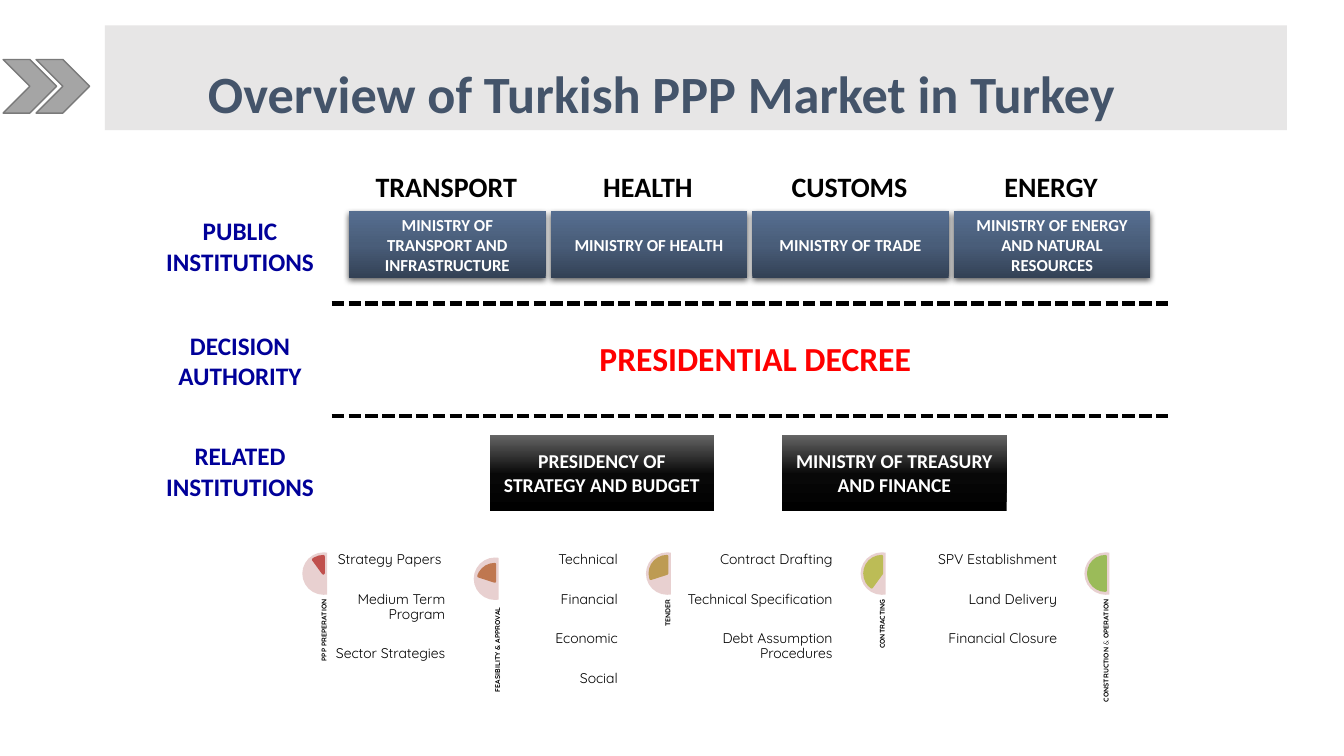
from copy import deepcopy
from dataclasses import dataclass

from lxml import etree
from pptx import Presentation
from pptx.dml.color import RGBColor
from pptx.enum.dml import MSO_LINE
from pptx.enum.shapes import MSO_CONNECTOR, MSO_SHAPE
from pptx.enum.text import MSO_ANCHOR, MSO_AUTO_SIZE, PP_ALIGN
from pptx.oxml.ns import qn
from pptx.util import Cm, Pt

CENTER, RIGHT, LEFT = PP_ALIGN.CENTER, PP_ALIGN.RIGHT, PP_ALIGN.LEFT
TOP, MIDDLE, BOTTOM = MSO_ANCHOR.TOP, MSO_ANCHOR.MIDDLE, MSO_ANCHOR.BOTTOM
NO_FIT = MSO_AUTO_SIZE.NONE

COLORS = {
    "black": "000000", "white": "FFFFFF", "title": "44546A", "banner": "E7E6E6",
    "chevron": "A5A5A5", "chevron edge": "7A7A7A", "row": "000099",
    "decree": "FF0000", "dial": "E8D0D0",
}
BLUE_SHADES = ((0, "334155"), (0.5, "495D79"), (1, "566E90"))
BLACK_SHADES = ((0, "000000"), (0.48, "080808"), (1, "666666"))

NO_MARGINS = {"margin_left": 0, "margin_right": 0, "margin_top": 0, "margin_bottom": 0}
STAGE_PARA = {"alignment": RIGHT, "line_spacing": 0.9, "space_before": Pt(0)}
CENTERED = {"alignment": CENTER}


@dataclass
class Area:
    left: float
    top: float
    width: float
    height: float

    def lengths(self) -> tuple:
        return Cm(self.left), Cm(self.top), Cm(self.width), Cm(self.height)


@dataclass
class Type:
    size: float
    color: str
    bold: bool = True
    name: str = "Calibri"


@dataclass
class Sector:
    heading: str
    ministry: tuple


@dataclass
class Stage:
    left: float
    color: str
    label: tuple
    items: tuple = ()
    top: float = 13.92
    pie_gap: float = 0.1
    label_top: float = 15.1
    label_middle: float = 0.33


HEADING = Type(20, "black")
ROW = Type(18, "row")
DECREE = Type(24, "decree")
MINISTRY = Type(12, "white")
RELATED = Type(14, "white")
TITLE = Type(37.4, "title")
STAGE_LABEL = Type(5, "black", name="Quicksand")
STAGE_ITEM = Type(10, "black", False, "Quicksand")

SECTORS = (
    Sector("TRANSPORT", ("MINISTRY OF TRANSPORT AND INFRASTRUCTURE",)),
    Sector("HEALTH", ("MINISTRY OF HEALTH",)),
    Sector("CUSTOMS", ("MINISTRY OF TRADE",)),
    Sector("ENERGY", ("MINISTRY OF ENERGY", "AND NATURAL RESOURCES")),
)
ROWS = (
    (5.38, ("PUBLIC INSTITUTIONS",)),
    (8.26, ("DECISION", "AUTHORITY")),
    (11.05, ("RELATED", "INSTITUTIONS")),
)
RELATED_BOXES = (
    (12.34, "PRESIDENCY OF STRATEGY AND BUDGET"),
    (19.71, "MINISTRY OF TREASURY AND FINANCE"),
)
STAGES = (
    Stage(7.62, "C0504D", ("PPP PREPERATION",),
          ("Strategy Papers ", "Medium Term Program", "Sector Strategies")),
    Stage(11.94, "BF7750", ("FEASIBILITY & APPROVAL",),
          ("Technical", "Financial", "Economic", "Social"), 14.05, 0.17, 15.3, 0.38),
    Stage(16.28, "BD9B53", ("TENDER",),
          ("Contract Drafting", "Technical Specification", "Debt Assumption Procedures")),
    Stage(21.69, "BCBC56", ("CONTRACTING",),
          ("SPV Establishment", "Land Delivery", "Financial Closure")),
    Stage(27.33, "9BBB59", ("CONSTRUCTION", " & ", "OPERATION")),
)
LIST_WIDTHS = (2.84, 2.87, 3.94, 4.19)


def rgb(color: str) -> RGBColor:
    return RGBColor.from_string(COLORS.get(color, color))


def apply(target, values: dict) -> None:
    for name, value in values.items():
        setattr(target, name, value)


def place(shape, area: Area) -> None:
    apply(shape, dict(zip(("left", "top", "width", "height"), area.lengths())))


def add_span(para, text: str, kind: Type, bold: bool) -> None:
    span = para.add_run()
    span.text = text
    apply(span.font, {"size": Pt(kind.size), "bold": bold, "name": kind.name})
    span.font.color.rgb = rgb(kind.color)


def write(shape, lines: tuple, kind: Type, para_format: dict, frame_format: dict) -> None:
    """Each line is a tuple of spans; every second span is not bold."""
    frame = shape.text_frame
    apply(frame, {"word_wrap": True, "auto_size": NO_FIT, **frame_format})
    for index, spans in enumerate(lines):
        para = frame.add_paragraph() if index else frame.paragraphs[0]
        apply(para, para_format)
        for number, text in enumerate(spans):
            add_span(para, text, kind, kind.bold and number % 2 == 0)


def add_text(page, area: Area, lines: tuple, kind: Type) -> None:
    box = page.shapes.add_textbox(*area.lengths())
    write(box, [(line,) for line in lines], kind, CENTERED, {"vertical_anchor": MIDDLE})


def add_figure(page, form, area: Area, fill: str = "", edge: str = "", weight: float = 1):
    figure = page.shapes.add_shape(form, *area.lengths())
    figure.shadow.inherit = False
    if fill:
        figure.fill.solid()
        figure.fill.fore_color.rgb = rgb(fill)
    if edge:
        figure.line.color.rgb = rgb(edge)
        figure.line.width = Pt(weight)
    else:
        figure.line.fill.background()
    return figure


def add_shaded_box(page, area: Area, lines: tuple, kind: Type, shades: tuple):
    box = add_figure(page, MSO_SHAPE.RECTANGLE, area)
    box.fill.gradient()
    box.fill.gradient_angle = 90
    stop_list = next(box._element.spPr.iter(qn("a:gsLst")))
    stop_list.append(deepcopy(stop_list[-1]))
    for stop, (position, color) in zip(box.fill.gradient_stops, shades):
        stop.position = position
        stop.color.rgb = rgb(color)
    write(box, [(line,) for line in lines], kind, CENTERED, {"vertical_anchor": MIDDLE})
    return box


def add_drop_shadow(box) -> None:
    effects = box._element.spPr.find(qn("a:effectLst"))
    shadow = etree.SubElement(effects, qn("a:outerShdw"), blurRad=str(Pt(4.5)),
                              dist=str(Pt(1.5)), dir="5400000", rotWithShape="0")
    color = etree.SubElement(shadow, qn("a:srgbClr"), val=COLORS["black"])
    etree.SubElement(color, qn("a:alpha"), val="63000")


def add_divider(page, top: float) -> None:
    line = page.shapes.add_connector(MSO_CONNECTOR.STRAIGHT, Cm(8.36), Cm(top), Cm(29.44), Cm(top))
    line.line.color.rgb = rgb("black")
    apply(line.line, {"width": Pt(3), "dash_style": MSO_LINE.SQUARE_DOT})
    etree.SubElement(line._element.spPr, qn("a:effectLst"))


def add_stage(page, stage: Stage, number: int) -> None:
    dial = add_figure(page, MSO_SHAPE.CHORD, Area(stage.left, stage.top, 1.07, 1.07), "dial")
    dial.adjustments[0], dial.adjustments[1] = 48, 168
    pie = add_figure(page, MSO_SHAPE.PIE,
                     Area(stage.left + 0.1, stage.top + stage.pie_gap, 0.86, 0.86),
                     stage.color, stage.color, 2)
    pie.adjustments[0], pie.adjustments[1] = 162 - 21.6 * number, 162
    length, depth = 3.1, 0.64
    middle = stage.left + stage.label_middle
    area = Area(middle - length / 2, stage.label_top + (length - depth) / 2, length, depth)
    label = page.shapes.add_textbox(*area.lengths())
    label.rotation = 270
    write(label, (stage.label,), STAGE_LABEL, STAGE_PARA,
          {**NO_MARGINS, "vertical_anchor": BOTTOM})


def fill_list(holder, stage: Stage, width: float) -> None:
    place(holder, Area(stage.left + 0.76, 13.92, width, 4.27))
    write(holder, [(item,) for item in stage.items], STAGE_ITEM,
          {**STAGE_PARA, "space_after": Pt(17.5)}, {**NO_MARGINS, "vertical_anchor": TOP})
    for para in holder.text_frame.paragraphs:
        properties = para._p.get_or_add_pPr()
        properties.set("marL", "0")
        properties.set("indent", "0")
        etree.SubElement(properties, qn("a:buNone"))


def main() -> None:
    deck = Presentation()
    deck.slide_width, deck.slide_height = Cm(33.87), Cm(19.05)
    page = deck.slides.add_slide(deck.slide_layouts.get_by_name("Comparison"))

    # Title banner and chevrons
    title = page.shapes.title
    place(title, Area(2.64, 0.64, 29.79, 2.64))
    title.fill.solid()
    title.fill.fore_color.rgb = rgb("banner")
    write(title, (("Overview of Turkish PPP Market in Turkey",),), TITLE,
          {"alignment": LEFT, "line_spacing": 0.7},
          {"vertical_anchor": BOTTOM, "margin_left": Cm(2.6), "margin_bottom": Cm(0.19)})
    for left in (0.08, 0.91):
        add_figure(page, MSO_SHAPE.CHEVRON, Area(left, 1.5, 1.35, 1.35), "chevron", "chevron edge")

    # Sectors with their ministries
    for column, sector in enumerate(SECTORS):
        shift = 5.08 * column
        add_text(page, Area(8.71 + shift, 4.19, 5.08, 0.99), (sector.heading,), HEADING)
        add_drop_shadow(add_shaded_box(page, Area(8.8 + shift, 5.33, 4.95, 1.68),
                                       sector.ministry, MINISTRY, BLUE_SHADES))

    # Row names, decree, related institutions
    for top, lines in ROWS:
        add_text(page, Area(3.66, top, 4.78, 1.63), lines, ROW)
    add_text(page, Area(13.94, 8.46, 10.19, 1.14), ("PRESIDENTIAL DECREE",), DECREE)
    for left, text in RELATED_BOXES:
        add_shaded_box(page, Area(left, 10.95, 5.66, 1.93), (text,), RELATED, BLACK_SHADES)
    for top in (7.65, 10.49):
        add_divider(page, top)

    # Project stages
    for number, stage in enumerate(STAGES, start=1):
        add_stage(page, stage, number)
    holders = [holder for holder in page.placeholders if holder.placeholder_format.idx]
    for holder, stage, width in zip(holders, STAGES, LIST_WIDTHS):
        fill_list(holder, stage, width)

    deck.save("out.pptx")


if __name__ == "__main__":
    main()
